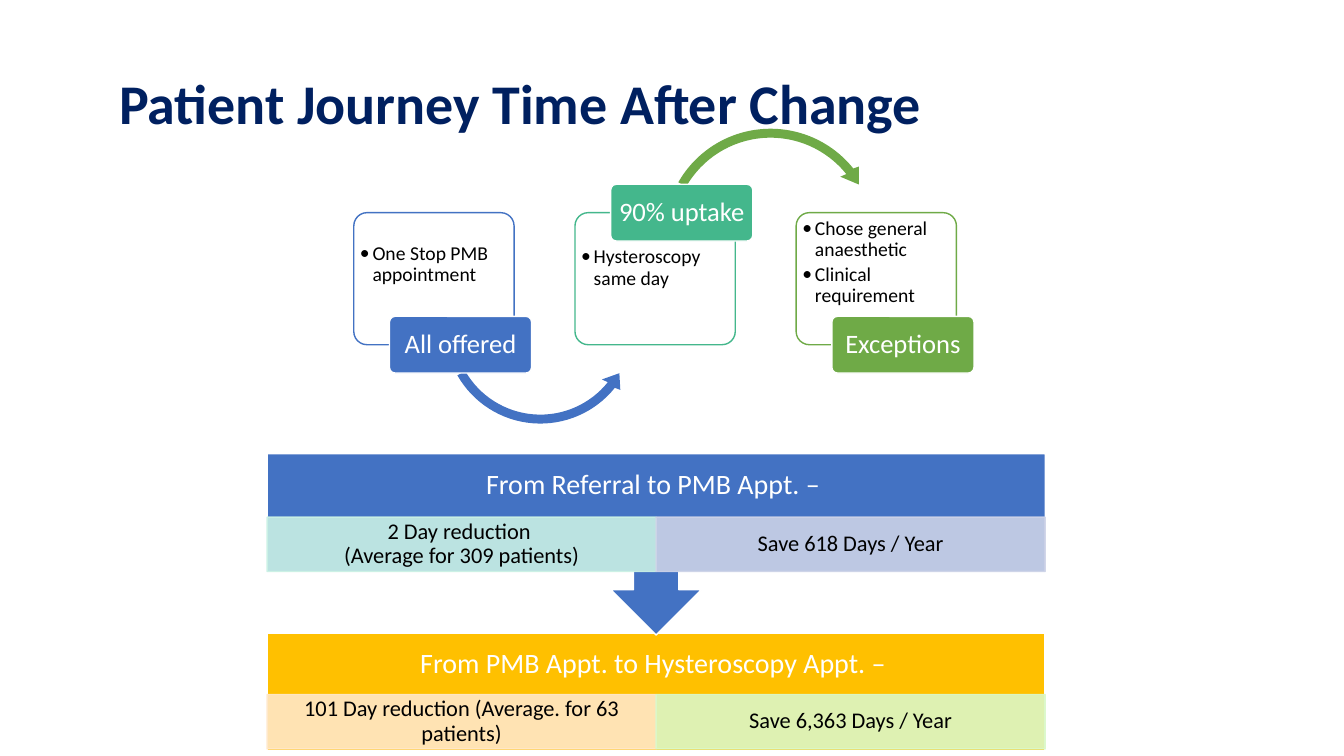
from math import cos, radians, sin, tan

from lxml import etree
from pptx import Presentation
from pptx.dml.color import RGBColor
from pptx.enum.shapes import MSO_SHAPE
from pptx.enum.text import MSO_ANCHOR, MSO_AUTO_SIZE, PP_ALIGN
from pptx.oxml.ns import qn
from pptx.util import Pt

RECTANGLE = MSO_SHAPE.RECTANGLE
ROUNDED = MSO_SHAPE.ROUNDED_RECTANGLE
CALLOUT = MSO_SHAPE.UP_ARROW_CALLOUT
TOP, MIDDLE = MSO_ANCHOR.TOP, MSO_ANCHOR.MIDDLE
LEFT, CENTER = PP_ALIGN.LEFT, PP_ALIGN.CENTER
NO_FIT = MSO_AUTO_SIZE.NONE

WHITE = RGBColor(0xFF, 0xFF, 0xFF)
BLACK = RGBColor(0x00, 0x00, 0x00)
NAVY = RGBColor(0x00, 0x20, 0x60)
BLUE = RGBColor(0x43, 0x72, 0xC3)
TEAL = RGBColor(0x44, 0xB7, 0x8C)
GREEN = RGBColor(0x6F, 0xAA, 0x47)
GOLD = RGBColor(0xFF, 0xC0, 0x00)
PALE_TEAL = RGBColor(0xCA, 0xF1, 0xE5)
PALE_BLUE = RGBColor(0xCD, 0xD3, 0xE8)
PALE_ORANGE = RGBColor(0xFF, 0xE8, 0xCA)
PALE_GREEN = RGBColor(0xDA, 0xF8, 0xC9)

# Step cards, in points
CARD_LEFT, CARD_TOP, CARD_STEP = 252.7, 151.9, 158
CARD_WIDTH, CARD_HEIGHT = 114.5, 94.3
LABEL_WIDTH, LABEL_HEIGHT = 101.5, 40.5

# Savings flow, in points
FLOW_LEFT, FLOW_WIDTH = 190.8, 555.8
HEADING_HEIGHT, CELL_HEIGHT = 45.4, 38.9


def set_opacity(color_format, percent):
    """Make a solid fill partly transparent."""
    color = color_format._xPr.find(qn("a:solidFill"))[0]
    etree.SubElement(color, qn("a:alpha"), val=str(percent * 1000))


def add_bullet(paragraph):
    properties = paragraph._p.get_or_add_pPr()
    properties.set("marL", str(Pt(9)))
    properties.set("indent", str(Pt(-9)))
    color = etree.SubElement(properties, qn("a:buClr"))
    etree.SubElement(color, qn("a:srgbClr"), val=str(BLACK))
    etree.SubElement(properties, qn("a:buFont"), typeface="Calibri")
    etree.SubElement(properties, qn("a:buChar"), char="•")


def arc_curves(radius, start, end, pieces=2):
    """Return the three polar control points of each cubic piece of an arc."""
    sweep = (end - start) / pieces
    handle = 4 / 3 * tan(radians(sweep) / 4)

    def control(degrees, offset):
        angle = radians(degrees)
        return (radius * (cos(angle) - offset * sin(angle)),
                radius * (sin(angle) + offset * cos(angle)))

    angles = [start + sweep * i for i in range(pieces + 1)]
    return [(control(a, handle), control(b, -handle), control(b, 0))
            for a, b in zip(angles, angles[1:])]


def write(shape, *lines, size, color=BLACK, bold=False, align=CENTER,
          anchor=MIDDLE, insets=(2.2, 2.2), bullets=False):
    """Fill a shape with one paragraph per line."""
    frame = shape.text_frame
    frame.auto_size = NO_FIT
    frame.word_wrap = True
    frame.vertical_anchor = anchor
    frame.margin_left = frame.margin_right = Pt(insets[0])
    frame.margin_top = frame.margin_bottom = Pt(insets[1])
    for index, line in enumerate(lines):
        paragraph = frame.add_paragraph() if index else frame.paragraphs[0]
        if bullets:
            paragraph.level = 1
            add_bullet(paragraph)
        paragraph.alignment = align
        paragraph.line_spacing = 0.9
        paragraph.space_before = Pt(2.1 if bullets and index else 0)
        run = paragraph.add_run()
        run.text = line
        run.font.name = "Calibri"
        run.font.size = Pt(size)
        run.font.bold = bold
        run.font.color.rgb = color


class JourneySlide:
    def __init__(self, presentation):
        layout = presentation.slide_layouts[5]
        self.slide = presentation.slides.add_slide(layout)
        self.shapes = self.slide.shapes

    def title(self, text):
        title = self.shapes.title
        title.left, title.top = Pt(77.8), Pt(45.4)
        title.width, title.height = Pt(624.2), Pt(61.2)
        write(title, text, size=40, color=NAVY, bold=True, align=LEFT,
              insets=(7.2, 3.6))

    def box(self, kind, left, top, width, height, fill, line=WHITE,
            opacity=100, adjustments=()):
        shape = self.shapes.add_shape(
            kind, Pt(left), Pt(top), Pt(width), Pt(height))
        shape.shadow.inherit = False
        for index, value in enumerate(adjustments):
            shape.adjustments[index] = value
        shape.fill.solid()
        shape.fill.fore_color.rgb = fill
        shape.line.color.rgb = line
        shape.line.width = Pt(1)
        if opacity < 100:
            set_opacity(shape.fill, opacity)
        return shape

    def text_box(self, left, top, width, height, *lines, **text_format):
        shape = self.shapes.add_textbox(
            Pt(left), Pt(top), Pt(width), Pt(height))
        write(shape, *lines, **text_format)

    def curved_arrow(self, center_x, center_y, radius, side, color):
        """Draw an arc arrow; side is 1 below the centre and -1 above it."""
        half = radius + 7.4
        start, end = 150.3, 38.7

        def polar(distance, degrees):
            angle = radians(degrees)
            return distance * cos(angle), distance * sin(angle)

        builder = self.shapes.build_freeform(0, 0)
        builder.add_line_segments([(Pt(2 * half), Pt(2 * half))])
        arrow = builder.convert_to_shape()
        arrow.left, arrow.top = Pt(center_x - half), Pt(center_y - half)
        outline = arrow._element.find(".//" + qn("a:path"))
        outline[:] = []

        def draw(command, *points):
            step = etree.SubElement(outline, qn("a:" + command))
            for x, y in points:
                etree.SubElement(step, qn("a:pt"), x=str(Pt(half + x)),
                                 y=str(Pt(half + side * y)))

        draw("moveTo", polar(radius + 3.2, start))
        for curve in arc_curves(radius + 3.2, start, end):
            draw("cubicBezTo", *curve)
        for corner in ((radius + 7.2, 37.7), (radius, 29.7),
                       (radius - 7.7, 39.8), (radius - 3.2, end)):
            draw("lnTo", polar(*corner))
        for curve in arc_curves(radius - 3.2, end, start):
            draw("cubicBezTo", *curve)
        draw("close")
        arrow.shadow.inherit = False
        arrow.fill.solid()
        arrow.fill.fore_color.rgb = color
        arrow.line.fill.background()

    def step_card(self, column, label, bullets, color, label_on_top=False,
                  anchor=TOP, arrow=None, arrow_color=BLUE):
        left = CARD_LEFT + column * CARD_STEP
        self.box(ROUNDED, left, CARD_TOP, CARD_WIDTH, CARD_HEIGHT, WHITE,
                 color, opacity=89, adjustments=[0.1])
        text_top = CARD_TOP + (22.3 if label_on_top else 2.2)
        self.text_box(left + 2.2, text_top, 110.2, 69.8, *bullets, size=14,
                      align=LEFT, anchor=anchor, bullets=True)
        if arrow:
            self.curved_arrow(*arrow, -1 if label_on_top else 1, arrow_color)
        label_middle = CARD_TOP + (0 if label_on_top else CARD_HEIGHT)
        tag = self.box(ROUNDED, left + 25.5, label_middle - LABEL_HEIGHT / 2,
                       LABEL_WIDTH, LABEL_HEIGHT, color, adjustments=[0.1])
        write(tag, label, size=19, color=WHITE, insets=(2.7, 1.8))

    def savings(self, top, cell_top, heading, cells):
        self.text_box(FLOW_LEFT, top, FLOW_WIDTH, HEADING_HEIGHT, heading,
                      size=20, color=WHITE, insets=(11.2, 11.2))
        width = FLOW_WIDTH / len(cells)
        for column, (color, lines) in enumerate(cells):
            cell = self.box(RECTANGLE, FLOW_LEFT + column * width, cell_top,
                            width, CELL_HEIGHT, color, color, opacity=89)
            set_opacity(cell.line.fill, 89)
            write(cell, *lines, size=16, insets=(8.9, 1.6))


def main():
    presentation = Presentation()
    presentation.slide_width, presentation.slide_height = Pt(960), Pt(540)
    journey = JourneySlide(presentation)
    journey.title("Patient Journey Time After Change")

    journey.step_card(0, "All offered", ["One Stop PMB appointment"], BLUE,
                      anchor=MIDDLE, arrow=(386, 234.4, 65))
    journey.step_card(1, "90% uptake", ["Hysteroscopy same day"], TEAL,
                      label_on_top=True, arrow=(550.4, 167.8, 72.6),
                      arrow_color=GREEN)
    journey.step_card(2, "Exceptions",
                      ["Chose general anaesthetic", "Clinical requirement"],
                      GREEN)

    journey.box(RECTANGLE, FLOW_LEFT, 452.2, FLOW_WIDTH, 84.2, GOLD)
    journey.savings(452.2, 496.1, "From PMB Appt. to Hysteroscopy Appt. – ", [
        (PALE_ORANGE, ["101 Day reduction (Average. for 63 patients)"]),
        (PALE_GREEN, ["Save 6,363 Days / Year"]),
    ])
    callout = journey.box(CALLOUT, FLOW_LEFT, 324, FLOW_WIDTH, 129.6, BLUE,
                          adjustments=[0.25, 0.25, 0.25, 0.65])
    callout.rotation = 180
    journey.savings(324, 369.4, "From Referral to PMB Appt. – ", [
        (PALE_TEAL, ["2 Day reduction ", "(Average for 309 patients)"]),
        (PALE_BLUE, ["Save 618 Days / Year"]),
    ])
    presentation.save("out.pptx")


if __name__ == "__main__":
    main()
